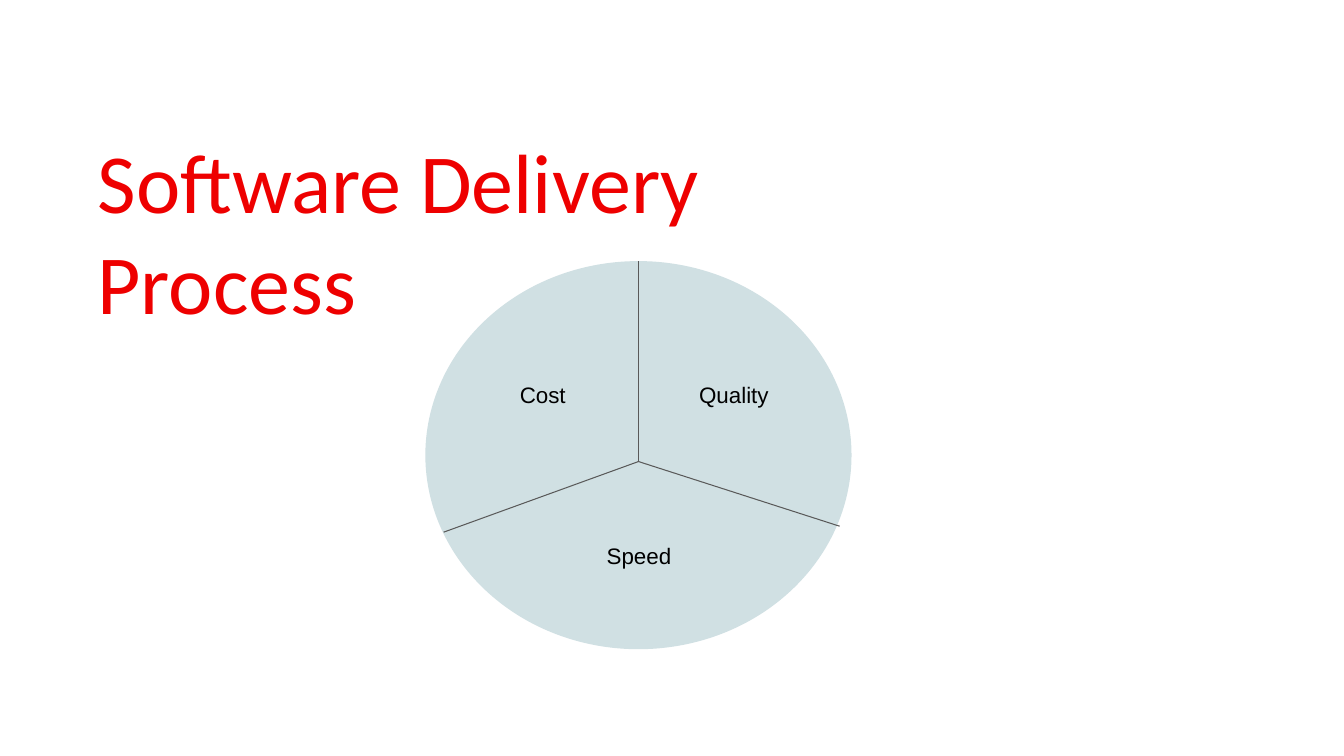
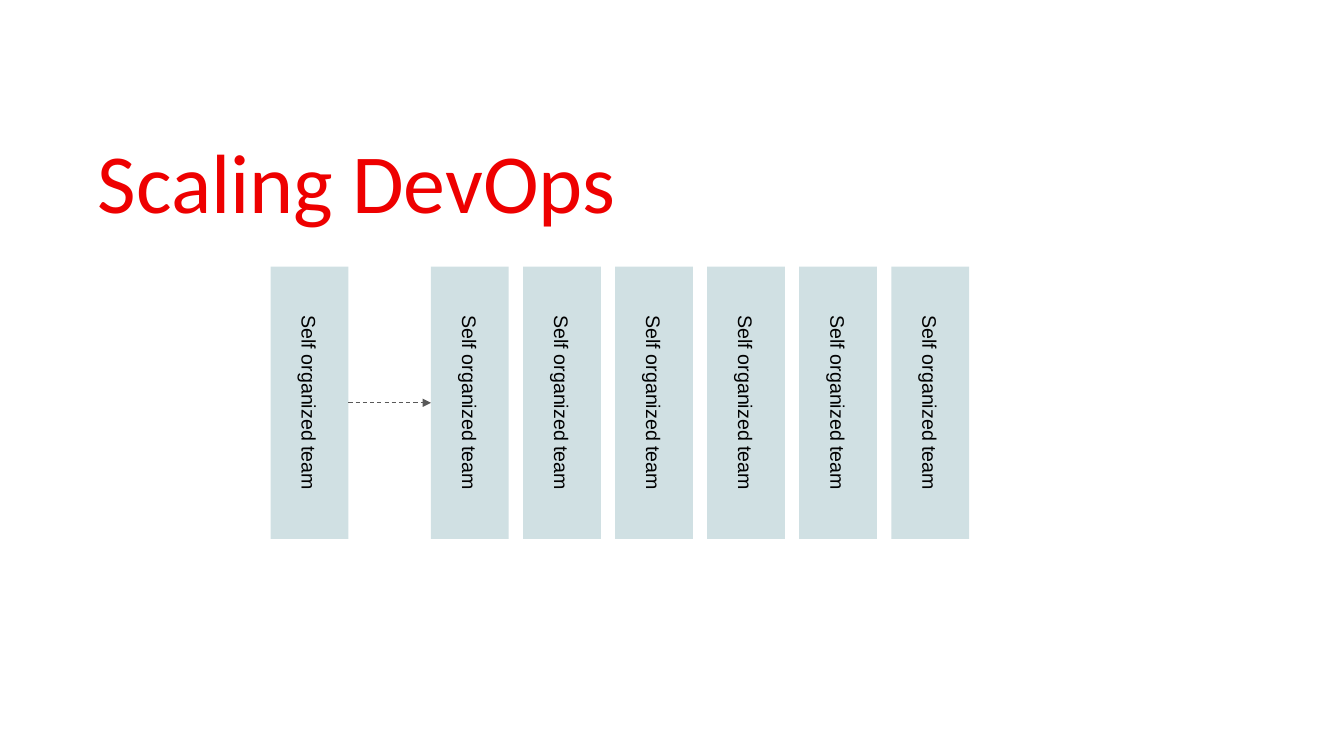
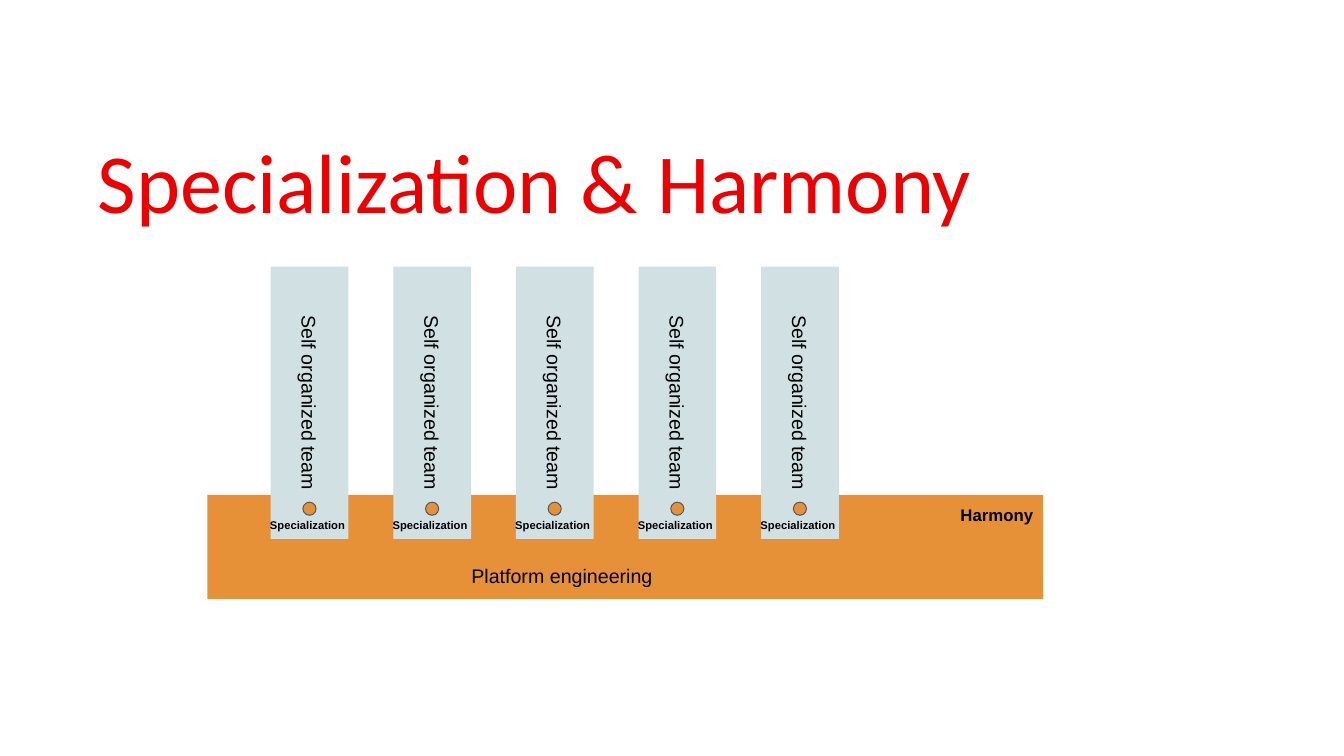
from dataclasses import dataclass

from lxml.etree import SubElement
from pptx import Presentation
from pptx.dml.color import RGBColor
from pptx.enum.dml import MSO_LINE_DASH_STYLE as DASH
from pptx.enum.shapes import MSO_CONNECTOR, MSO_SHAPE as SHAPE
from pptx.enum.text import MSO_ANCHOR as ANCHOR, MSO_AUTO_SIZE as AUTO, PP_ALIGN as ALIGN
from pptx.oxml.ns import qn
from pptx.util import Cm, Pt


@dataclass(frozen=True)
class Theme:
    red: str = "EE0000"
    pale: str = "D0E0E3"
    orange: str = "E69138"
    grey: str = "595959"
    black: str = "000000"
    title_font: str = "Calibri"
    body_font: str = "Arial"
    title_size: int = 60
    label_size: int = 16
    body_size: int = 14
    note_size: int = 12
    small_size: int = 8
    line_width: float = 0.75
    inset: float = 0.25
    title_inset: float = 1.22


TEAM = "Self organized team"
TEAM_LENGTH, TEAM_WIDTH = 6.86, 1.96
TEAM_X, TEAM_Y = 7.8, 10.15  # centre of the first team bar


class Deck:
    """Theme, presentation and current slide; all lengths are in centimetres."""

    def __init__(self, theme):
        self.theme = theme
        self.prs = Presentation()
        self.prs.slide_width, self.prs.slide_height = Cm(33.87), Cm(19.05)
        self.s = None

    def slide(self, title, title_width):
        t = self.theme
        self.s = self.prs.slides.add_slide(self.prs.slide_layouts[5])
        sp = self.s.shapes.title
        sp.left, sp.top, sp.width, sp.height = Cm(1.24), Cm(3.02), Cm(title_width), Cm(5.84)
        self.put_text(sp.text_frame, title, t.title_size, color=t.red, font=t.title_font)
        sp.text_frame.margin_left = Cm(t.title_inset)

    def put_text(self, tf, text, size, bold=False, color=None, font=None,
                 align=ALIGN.LEFT, anchor=ANCHOR.TOP):
        t = self.theme
        tf.word_wrap = True
        tf.auto_size = AUTO.NONE
        tf.vertical_anchor = anchor
        tf.margin_left = tf.margin_right = tf.margin_top = tf.margin_bottom = Cm(t.inset)
        p = tf.paragraphs[0]
        p.alignment = align
        r = p.add_run()
        r.text = text
        r.font.name = font or t.body_font
        r.font.size = Pt(size)
        r.font.bold = bold
        r.font.color.rgb = RGBColor.from_string(color or t.black)

    def label(self, text, x, y, w, h, size, bold=False):
        box = self.s.shapes.add_textbox(Cm(x), Cm(y), Cm(w), Cm(h))
        self.put_text(box.text_frame, text, size, bold)

    def stroke(self, line):
        line.color.rgb = RGBColor.from_string(self.theme.grey)
        line.width = Pt(self.theme.line_width)

    def shape(self, kind, x, y, w, h, fill, outlined=False):
        sp = self.s.shapes.add_shape(kind, Cm(x), Cm(y), Cm(w), Cm(h))
        sp.shadow.inherit = False
        sp.fill.solid()
        sp.fill.fore_color.rgb = RGBColor.from_string(fill)
        if outlined:
            self.stroke(sp.line)
        else:
            sp.line.fill.background()
        return sp

    def line(self, start, end, dashed_arrow=False):
        c = self.s.shapes.add_connector(MSO_CONNECTOR.STRAIGHT,
                                        *(Cm(v) for v in (*start, *end)))
        self.stroke(c.line)
        sp_pr = c._element.spPr
        if dashed_arrow:
            c.line.dash_style = DASH.DASH
            SubElement(sp_pr.find(qn("a:ln")), qn("a:tailEnd"), type="triangle")
        SubElement(sp_pr, qn("a:effectLst"))

    def team(self, x):
        """Upright bar centred on x, with its text turned clockwise."""
        sp = self.shape(SHAPE.RECTANGLE, x - TEAM_LENGTH / 2, TEAM_Y - TEAM_WIDTH / 2,
                        TEAM_LENGTH, TEAM_WIDTH, self.theme.pale)
        sp.rotation = 90
        self.put_text(sp.text_frame, TEAM, self.theme.body_size,
                      align=ALIGN.CENTER, anchor=ANCHOR.MIDDLE)

    def dot(self, x, y, size=0.33):
        self.shape(SHAPE.OVAL, x - size / 2, y - size / 2, size, size,
                   self.theme.orange, outlined=True)


def delivery_slide(deck):
    deck.slide("Software Delivery Process", 21.03)
    deck.shape(SHAPE.OVAL, 10.72, 6.58, 10.74, 9.78, deck.theme.pale)
    hub = (16.09, 11.63)
    for rim in ((11.18, 13.41), (21.16, 13.26), (16.09, 6.58)):
        deck.line(hub, rim)
    for text, x, y, w in (("Cost", 12.85, 9.35, 2.06),
                          ("Quality", 17.37, 9.35, 2.49),
                          ("Speed", 15.04, 13.41, 2.49)):
        deck.label(text, x, y, w, 1.19, deck.theme.label_size)


def scaling_slide(deck):
    deck.slide("Scaling DevOps", 25.5)
    first_copy, pitch = 11.84, 2.32
    deck.team(TEAM_X)
    for i in range(6):
        deck.team(first_copy + i * pitch)
    deck.line((TEAM_X + TEAM_WIDTH / 2, TEAM_Y),
              (first_copy - TEAM_WIDTH / 2, TEAM_Y), dashed_arrow=True)


def harmony_slide(deck):
    t = deck.theme
    deck.slide("Specialization & Harmony", 28.12)
    platform = deck.shape(SHAPE.RECTANGLE, 5.23, 12.47, 21.06, 2.62, t.orange)
    deck.put_text(platform.text_frame, "Harmony", t.note_size, bold=True, align=ALIGN.RIGHT)
    pitch, label_width = 3.09, 2.49
    for i in range(5):
        x = TEAM_X + i * pitch
        deck.team(x)
        deck.dot(x, 12.82)
        deck.label("Specialization", x - label_width / 2, 12.82, label_width, 0.86,
                   t.small_size, bold=True)
    deck.label("Platform engineering", 11.63, 13.97, 6.71, 1.12, t.body_size)


def main():
    deck = Deck(Theme())
    delivery_slide(deck)
    scaling_slide(deck)
    harmony_slide(deck)
    deck.prs.save("out.pptx")


if __name__ == "__main__":
    main()
